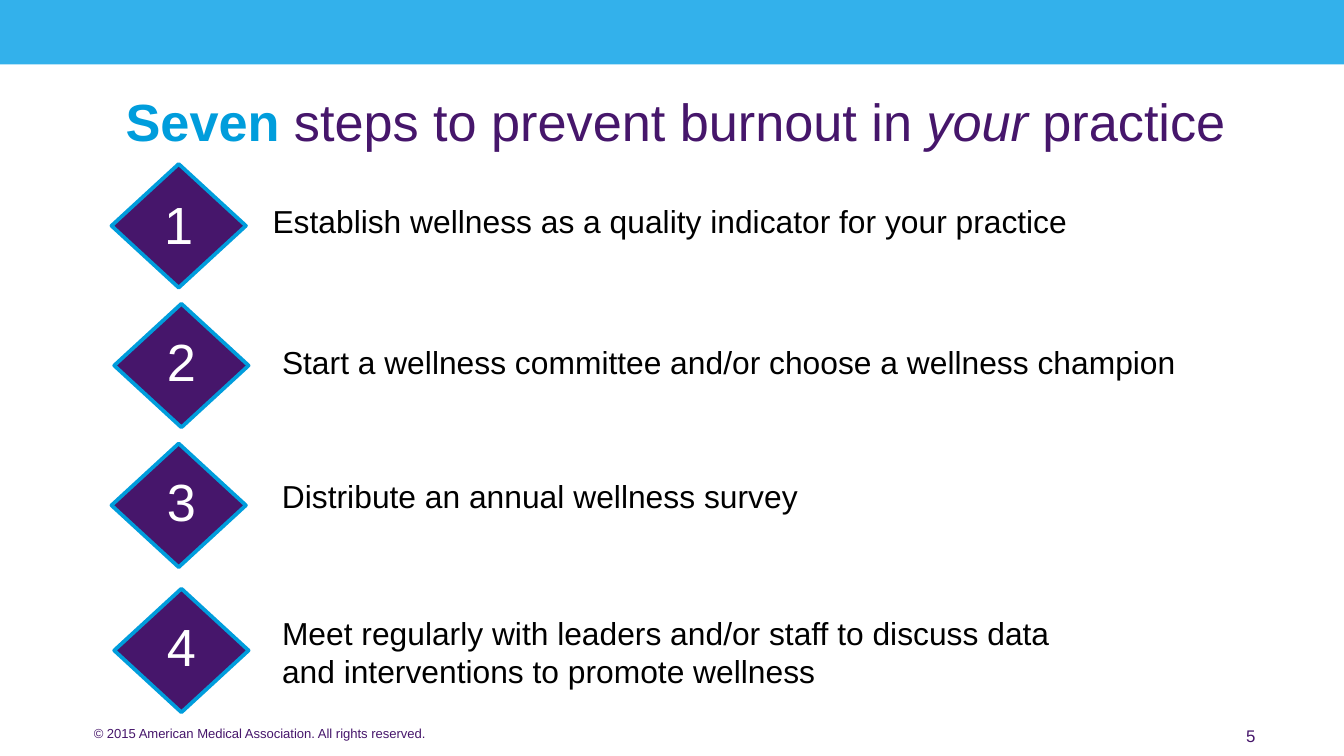
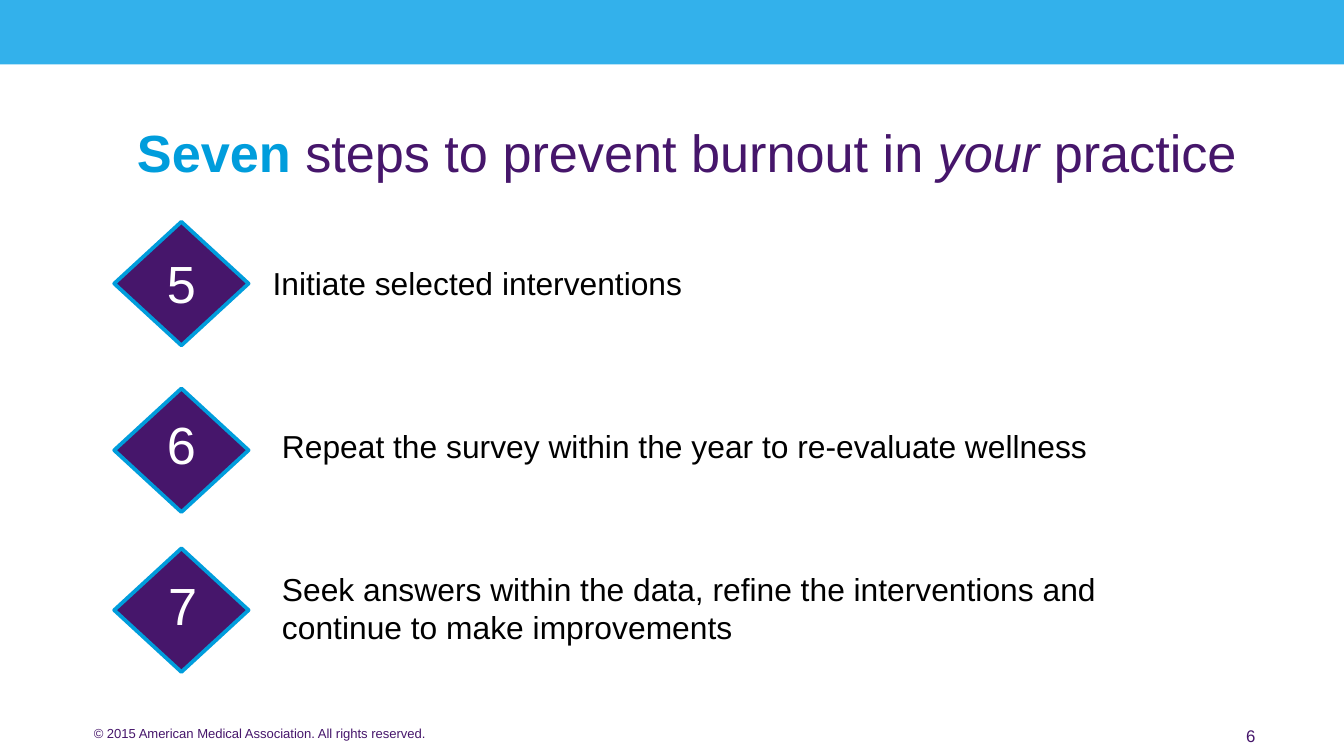
from lxml.etree import SubElement
from pptx import Presentation
from pptx.dml.color import RGBColor
from pptx.enum.shapes import MSO_SHAPE
from pptx.enum.text import MSO_ANCHOR, MSO_AUTO_SIZE, PP_ALIGN
from pptx.oxml.ns import qn
from pptx.util import Inches, Pt

COLORS = {"band": "33B1EB", "blue": "009DDC", "purple": "46166B",
          "white": "FFFFFF", "black": "000000"}
FONT = "Arial"
COPYRIGHT = "© 2015 American Medical Association. All rights reserved."

# Each step: number, diamond (left, top), number (left, top), text box, wording
PAGES = [
    {"number": "5", "title_at": (0.53, 0.43), "title_end": " practice ", "steps": [
        ("1", (0.83, 1.22), (1.08, 1.38), (1.93, 1.45, 6.87, 0.44),
         "Establish wellness as a quality indicator for your practice"),
        ("2", (0.85, 2.26), (1.1, 2.4), (2, 2.5, 6.91, 0.44),
         "Start a wellness committee and/or choose a wellness champion"),
        ("3", (0.83, 3.3), (1.1, 3.44), (2, 3.5, 6.53, 0.44),
         "Distribute an annual wellness survey"),
        ("4", (0.85, 4.38), (1.1, 4.52), (2, 4.52, 6.25, 0.64),
         "Meet regularly with leaders and/or staff to discuss data "
         "and interventions to promote wellness"),
    ]},
    {"number": "6", "title_at": (0.56, 0.66), "title_end": " practice", "steps": [
        ("5", (0.85, 1.65), (1.1, 1.82), (1.93, 1.91, 6.87, 0.39),
         "Initiate selected interventions"),
        ("6", (0.85, 2.89), (1.1, 3.02), (2, 3.13, 6.53, 0.43),
         "Repeat the survey within the year to re-evaluate wellness"),
        ("7", (0.85, 4.08), (1.11, 4.22), (2, 4.19, 6.53, 0.69),
         "Seek answers within the data, refine the interventions "
         "and continue to make improvements"),
    ]},
]


def add_span(para, text, size, color, bold=False, italic=False):
    span = para.add_run()
    span.text = text
    span.font.name = FONT
    span.font.size = Pt(size)
    span.font.bold = bold
    span.font.italic = italic
    span.font.color.rgb = RGBColor.from_string(COLORS[color])


def add_text(page, text, at, size, color, align=PP_ALIGN.LEFT):
    box = page.shapes.add_textbox(*map(Inches, at))
    box.text_frame.word_wrap = True
    para = box.text_frame.paragraphs[0]
    para.alignment = align
    add_span(para, text, size, color)


# Widescreen deck, 16:9
deck = Presentation()
deck.slide_width = Inches(10)
deck.slide_height = Inches(10 * 9 / 16)

for content in PAGES:
    page = deck.slides.add_slide(deck.slide_layouts[5])

    # Top band and footer
    band = page.shapes.add_shape(MSO_SHAPE.RECTANGLE, 0, 0, deck.slide_width, Inches(0.48))
    band.shadow.inherit = False
    band.fill.solid()
    band.fill.fore_color.rgb = RGBColor.from_string(COLORS["band"])
    band.line.fill.background()
    add_text(page, COPYRIGHT, (0.6, 5.35, 3.74, 0.35), 7, "purple")
    add_text(page, content["number"], (7.11, 5.35, 2.33, 0.3), 9, "purple",
             align=PP_ALIGN.RIGHT)

    # Title
    title = page.shapes.title
    title.left, title.top = map(Inches, content["title_at"])
    title.width, title.height = Inches(9.1), Inches(0.94)
    frame = title.text_frame
    frame.word_wrap = True
    frame.auto_size = MSO_AUTO_SIZE.NONE
    frame.vertical_anchor = MSO_ANCHOR.MIDDLE
    para = frame.paragraphs[0]
    para.alignment = PP_ALIGN.CENTER
    add_span(para, "Seven ", 28, "blue", bold=True)
    add_span(para, "steps to prevent burnout in ", 28, "purple")
    add_span(para, "your", 28, "purple", italic=True)
    add_span(para, content["title_end"], 28, "purple")

    # Numbered steps
    for number, diamond_at, number_at, text_at, wording in content["steps"]:
        diamond = page.shapes.add_shape(MSO_SHAPE.DIAMOND, *map(Inches, (*diamond_at, 1, 0.92)))
        diamond.shadow.inherit = False
        diamond.fill.solid()
        diamond.fill.fore_color.rgb = RGBColor.from_string(COLORS["purple"])
        diamond.line.color.rgb = RGBColor.from_string(COLORS["blue"])
        diamond.line.width = Pt(2)
        outline = diamond.element.spPr.find(qn("a:ln"))
        SubElement(outline, qn("a:round"))
        add_text(page, number, (*number_at, 0.5, 0.57), 28, "white", align=PP_ALIGN.CENTER)
        add_text(page, wording, text_at, 17, "black")

deck.save("out.pptx")
